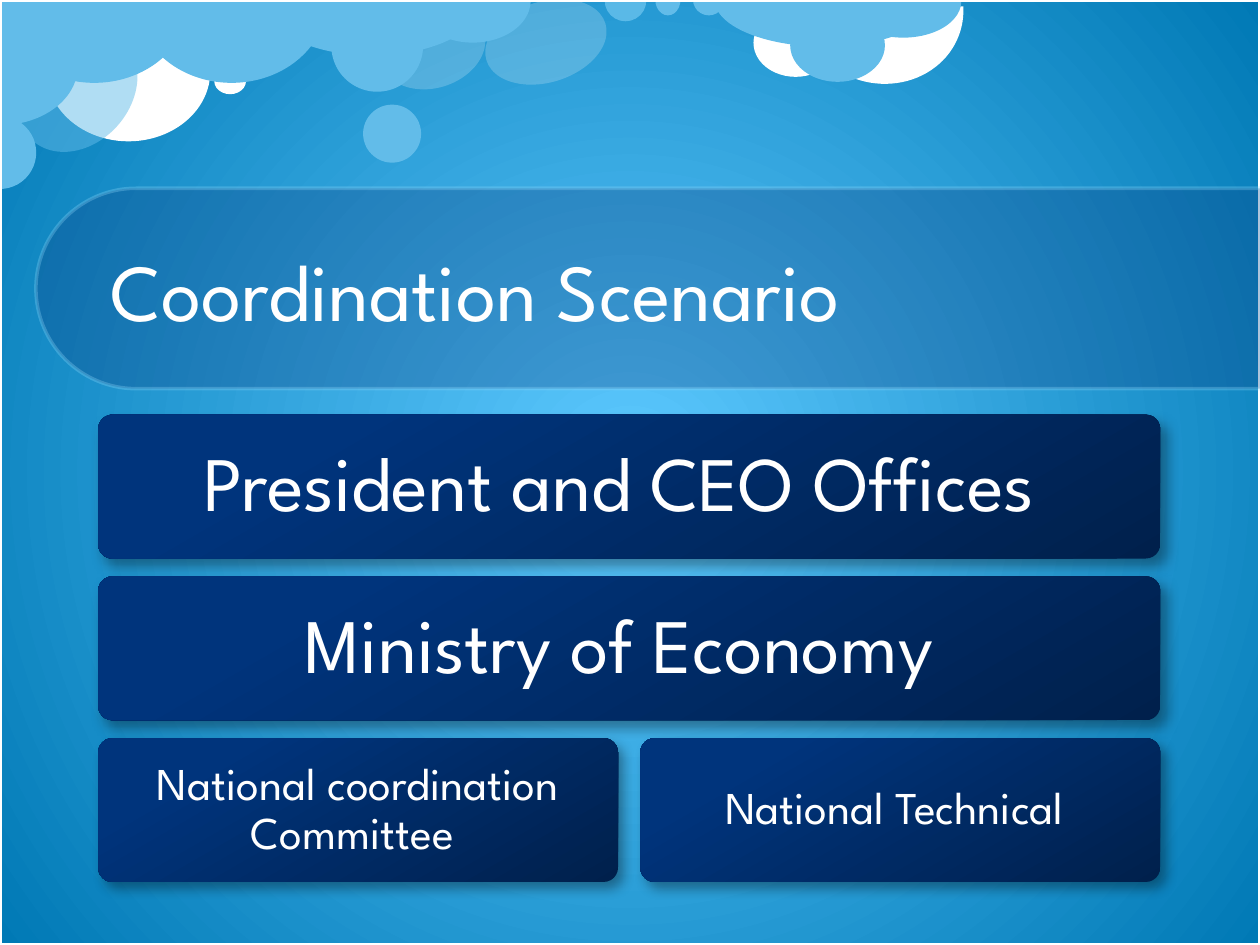
from lxml.etree import SubElement
from pptx import Presentation
from pptx.dml.color import RGBColor
from pptx.enum.shapes import MSO_SHAPE as Shape
from pptx.enum.text import MSO_ANCHOR as Anchor, MSO_AUTO_SIZE as AutoSize, PP_ALIGN as Align
from pptx.oxml.ns import qn
from pptx.util import Cm, Pt

WIDTH, HEIGHT = 25.4, 19.05
FONT = "League Spartan"
WHITE, SKY, PALE, NAVY = "FFFFFF", "62BCE9", "8FD9FB", "073779"
OVAL, HALF, ARC = Shape.OVAL, Shape.PIE, Shape.ARC
ANGLES = {HALF: (0, 108), ARC: (151.8, 44.48)}

TITLE = "Coordination Scenario"
ROWS = [
    (["President and CEO Offices "], 44, 0.46),
    (["Ministry of Economy "], 44, 0.46),
    (["National coordination Committee ", "National Technical "], 26, 0.28),
]
BOX_LEFT, BOX_TOP, BOX_WIDTH, BOX_HEIGHT = 1.98, 8.36, 21.41, 2.9
ROW_GAP, COLUMN_GAP = 0.36, 0.45
BOX_STOPS = [(0, "00204C"), (80, "00347C"), (100, "00347D")]
SKY_STOPS = [(0, "5DC9FF"), (100, "0079B5")]

CLOUDS = [
    (OVAL, (7.9, -0.13, 1.63, 2.18), WHITE, 20, 72.8),
    (OVAL, (0.94, 0.03, 3.3, 2.82), WHITE, 100, 0),
    (ARC, (16.23, -1.52, 3.07, 3.33), WHITE, 100, 106.5),
    (OVAL, (15.19, 0.18, 1.7, 1.37), WHITE, 100, 0),
    (HALF, (-0.03, -1.68, 3.86, 3.35), SKY, 100, 0),
    (HALF, (5.28, -1.12, 4.45, 2.24), SKY, 100, 0),
    (OVAL, (7.32, 2.11, 1.17, 1.17), SKY, 100, 0),
    (OVAL, (0.48, 0.46, 2.16, 2.72), SKY, 50, 41.8),
    (HALF, (-0.74, 2.34, 1.47, 1.47), SKY, 100, 270),
    (OVAL, (4.32, 1.37, 0.64, 0.53), WHITE, 100, 0),
    (HALF, (2.74, -1.68, 3.86, 3.35), SKY, 100, 0),
    (HALF, (14.4, -0.97, 4.45, 1.91), SKY, 100, 0),
    (OVAL, (15.93, 0.18, 1.91, 1.47), SKY, 100, 0),
    (HALF, (17.04, -0.71, 2.34, 1.47), SKY, 100, 0),
    (OVAL, (10.19, -0.41, 1.63, 2.51), WHITE, 20, 72.8),
    (HALF, (12.19, -0.41, 0.84, 0.84), PALE, 50, 0),
    (HALF, (13.21, -0.33, 0.51, 0.64), SKY, 100, 0),
    (HALF, (13.97, -0.33, 0.64, 0.64), SKY, 100, 0),
    (OVAL, (6.68, 0, 1.85, 1.85), SKY, 100, 0),
    (HALF, (8.36, -0.84, 2.34, 1.7), SKY, 100, 0),
    (HALF, (-1.19, -0.23, 2.36, 3.15), SKY, 100, 270),
]


def add_node(parent, tag, **attributes):
    node = SubElement(parent, qn(tag))
    for name, value in attributes.items():
        node.set(name, str(value))
    return node


def add_color(parent, color, alpha=100):
    node = add_node(parent, "a:srgbClr", val=color)
    if alpha < 100:
        add_node(node, "a:alpha", val=alpha * 1000)


def set_color(fill, color, alpha=100):
    fill.solid()
    fill.fore_color.rgb = RGBColor.from_string(color)
    if alpha < 100:
        solid = fill._xPr.find(qn("a:solidFill"))
        add_node(solid[0], "a:alpha", val=alpha * 1000)


def set_gradient(fill, stops, angle=None):
    fill.gradient()
    gradient = fill._xPr.find(qn("a:gradFill"))
    for child in list(gradient):
        gradient.remove(child)
    stop_list = add_node(gradient, "a:gsLst")
    for position, color in stops:
        add_color(add_node(stop_list, "a:gs", pos=position * 1000), color)
    if angle is None:
        path = add_node(gradient, "a:path", path="circle")
        add_node(path, "a:fillToRect", l=50000, t=50000, r=50000, b=50000)
    else:
        add_node(gradient, "a:lin", ang=angle * 60000, scaled=0)


def add_shape(page, kind, place, color=None, alpha=100, rotation=0, angles=(), line=None, line_alpha=100):
    shape = page.shapes.add_shape(kind, *map(Cm, place))
    shape.rotation = rotation
    shape.shadow.inherit = False
    for index, value in enumerate(angles):
        shape.adjustments[index] = value
    if color:
        set_color(shape.fill, color, alpha)
    else:
        shape.fill.background()
    if line:
        shape.line.width = Pt(2)
        set_color(shape.line.fill, line, line_alpha)
    else:
        shape.line.fill.background()
    return shape


def set_text(box, text, size, align, spacing, inset):
    frame = box.text_frame
    frame.word_wrap = True
    frame.auto_size = AutoSize.NONE
    frame.vertical_anchor = Anchor.MIDDLE
    frame.margin_left = frame.margin_right = Cm(inset)
    frame.margin_top = frame.margin_bottom = Cm(inset)
    para = frame.paragraphs[0]
    para.alignment, para.line_spacing = align, spacing
    span = para.add_run()
    span.text = text
    span.font.name, span.font.size = FONT, Pt(size)
    span.font.color.rgb = RGBColor.from_string(WHITE)


def add_box(page, place, text, size, inset):
    box = add_shape(page, Shape.ROUNDED_RECTANGLE, place, angles=(0.1,))
    set_gradient(box.fill, BOX_STOPS, angle=240)
    effects = box._element.spPr.find(qn("a:effectLst"))
    shadow = add_node(effects, "a:outerShdw", blurRad=Pt(7), dist=Pt(5), dir=50 * 60000, rotWithShape=0)
    add_color(shadow, "000000", 35)
    set_text(box, text, size, Align.CENTER, 0.9, inset)


def main():
    """Build the coordination slide and save it."""
    deck = Presentation()
    deck.slide_width, deck.slide_height = Cm(WIDTH), Cm(HEIGHT)
    page = deck.slides.add_slide(deck.slide_layouts[5])
    set_gradient(page.background.fill, SKY_STOPS)

    for kind, place, color, alpha, rotation in CLOUDS:
        add_shape(page, kind, place, color, alpha, rotation, ANGLES.get(kind, ()))
    add_shape(page, Shape.RECTANGLE, (0, 0, WIDTH, HEIGHT), line=WHITE)
    add_shape(page, Shape.ROUND_2_SAME_RECTANGLE, (11.05, -6.53, 4.04, 24.69), NAVY, 30, 270,
              (0.5, 0), PALE, 30)

    title = page.shapes.title
    page.shapes._spTree.append(title._element)
    title.left, title.top, title.width, title.height = map(Cm, (1.98, 3.81, 21.44, 4.01))
    set_text(title, TITLE, 46, Align.LEFT, Pt(56), 0.25)

    for row, (labels, size, inset) in enumerate(ROWS):
        top = BOX_TOP + row * (BOX_HEIGHT + ROW_GAP)
        width = (BOX_WIDTH - COLUMN_GAP * (len(labels) - 1)) / len(labels)
        for column, label in enumerate(labels):
            left = BOX_LEFT + column * (width + COLUMN_GAP)
            add_box(page, (left, top, width, BOX_HEIGHT), label, size, inset)

    deck.save("out.pptx")


if __name__ == "__main__":
    main()
